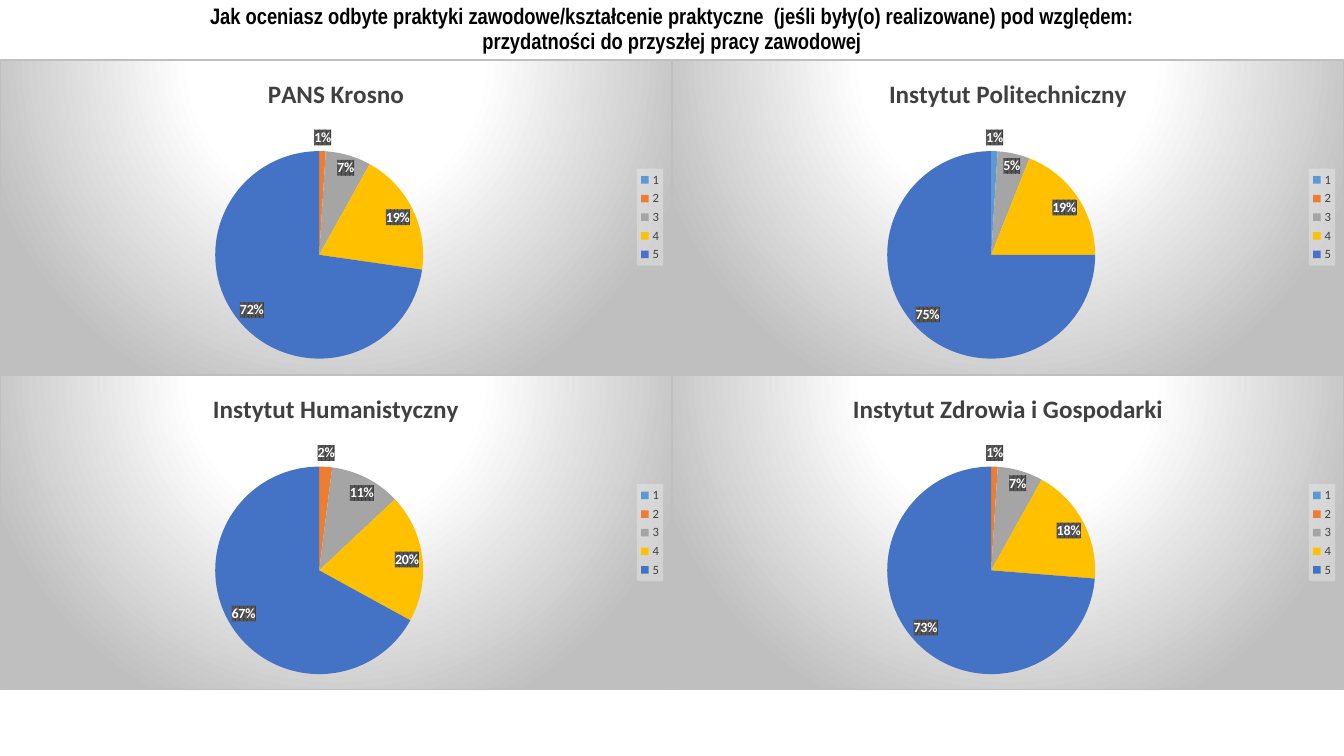
import dataclasses

import lxml.etree
import pptx
import pptx.chart.data
import pptx.dml.color
import pptx.enum.chart
import pptx.enum.text
import pptx.oxml
import pptx.oxml.ns
import pptx.util

Inches = pptx.util.Inches
NAMESPACES = pptx.oxml.ns.nsdecls("c", "a")


@dataclasses.dataclass(frozen=True)
class Theme:
    heading_font: str = "Arial Narrow"
    chart_font: str = "Calibri"
    black: str = "000000"
    white: str = "FFFFFF"
    dark_grey: str = "404040"
    mid_grey: str = "595959"
    edge_grey: str = "BFBFBF"
    legend_grey: str = "F2F2F2"
    grades: tuple[str, ...] = ("5B9BD5", "ED7D31", "A5A5A5", "FFC000", "4472C4")
    heading_size: float = 16
    chart_title_size: float = 18
    label_size: float = 10
    legend_size: float = 9


@dataclasses.dataclass(frozen=True)
class Survey:
    unit: str
    shares: tuple[int, ...]
    unlabelled: tuple[int, ...] = ()


THEME = Theme()
GRADES = ("1", "2", "3", "4", "5")
SURVEYS = (
    Survey("PANS Krosno", (0, 1, 7, 19, 72)),
    Survey("Instytut Politechniczny", (1, 0, 5, 19, 75), unlabelled=(1,)),
    Survey("Instytut Humanistyczny", (0, 2, 11, 20, 67), unlabelled=(0,)),
    Survey("Instytut Zdrowia i Gospodarki", (0, 1, 7, 18, 73)),
)
HEADING = (
    "Jak oceniasz odbyte praktyki zawodowe/kształcenie praktyczne  "
    "(jeśli były(o) realizowane) pod względem:\v"
    "przydatności do przyszłej pracy zawodowej"
)
SLIDE_WIDTH, SLIDE_HEIGHT = 13.33, 7.5
HEADING_HEIGHT = 0.59
COLUMNS = 2
CHART_WIDTH, CHART_HEIGHT = SLIDE_WIDTH / COLUMNS, 3.13


def style_font(font, *, name: str, size: float, color: str, bold: bool = False) -> None:
    font.name = name
    font.size = pptx.util.Pt(size)
    font.bold = bold
    font.color.rgb = pptx.dml.color.RGBColor.from_string(color)


def write_text(frame, text: str, *, line_spacing: float = 1.0, **font_format) -> None:
    paragraph = frame.paragraphs[0]
    paragraph.text = text
    paragraph.alignment = pptx.enum.text.PP_ALIGN.CENTER
    paragraph.line_spacing = line_spacing
    for run in paragraph.runs:
        style_font(run.font, **font_format)


def chart_xml(tag: str, content: str) -> lxml.etree._Element:
    return pptx.oxml.parse_xml(f"<c:{tag} {NAMESPACES}>{content}</c:{tag}>")


def solid(color: str) -> str:
    return f'<a:srgbClr val="{color}"/>'


def add_heading(slide) -> None:
    heading = slide.shapes.add_textbox(0, 0, Inches(SLIDE_WIDTH), Inches(HEADING_HEIGHT))
    frame = heading.text_frame
    frame.word_wrap = True
    frame.vertical_anchor = pptx.enum.text.MSO_ANCHOR.MIDDLE
    write_text(frame, HEADING, line_spacing=0.9, name=THEME.heading_font,
               size=THEME.heading_size, color=THEME.black, bold=True)


def add_background(chart) -> None:
    stops = "".join(
        f'<a:gs pos="{percent * 1000}">{solid(color)}</a:gs>'
        for percent, color in ((0, THEME.white), (39, THEME.white), (100, THEME.edge_grey))
    )
    background = chart_xml("spPr", (
        f'<a:gradFill><a:gsLst>{stops}</a:gsLst><a:path path="circle">'
        '<a:fillToRect l="50000" t="-80000" r="50000" b="180000"/></a:path></a:gradFill>'
        f'<a:ln w="9525"><a:solidFill>{solid(THEME.edge_grey)}</a:solidFill></a:ln>'
    ))
    chart._chartSpace.find(pptx.oxml.ns.qn("c:chart")).addnext(background)


def place_pie(chart) -> None:
    area = chart._chartSpace.chart.plotArea
    for layout in area.findall(pptx.oxml.ns.qn("c:layout")):
        area.remove(layout)
    bounds = "".join(
        f'<c:{name} val="{value}"/>'
        for name, value in (("layoutTarget", "inner"), ("xMode", "edge"), ("yMode", "edge"),
                            ("x", 0.32), ("y", 0.29), ("w", 0.31), ("h", 0.66))
    )
    area.insert(0, chart_xml("layout", f"<c:manualLayout>{bounds}</c:manualLayout>"))


def add_labels(plot, unlabelled: tuple[int, ...]) -> None:
    series = plot.series[0]
    labels = series.data_labels
    labels.show_value = True
    labels.number_format = '0"%"'
    labels.number_format_is_linked = False
    labels.position = pptx.enum.chart.XL_LABEL_POSITION.BEST_FIT
    style_font(labels.font, name=THEME.chart_font, size=THEME.label_size,
               color=THEME.white, bold=True)
    plate = chart_xml("spPr", (
        f'<a:pattFill prst="pct75"><a:fgClr>{solid(THEME.dark_grey)}</a:fgClr>'
        f"<a:bgClr>{solid(THEME.mid_grey)}</a:bgClr></a:pattFill><a:ln><a:noFill/></a:ln>"
    ))
    labels._element.find(pptx.oxml.ns.qn("c:txPr")).addprevious(plate)
    for index in unlabelled:
        labels._element.insert(0, chart_xml("dLbl", f'<c:idx val="{index}"/><c:delete val="1"/>'))


def add_legend(chart) -> None:
    chart.has_legend = True
    legend = chart.legend
    legend.position = pptx.enum.chart.XL_LEGEND_POSITION.RIGHT
    legend.include_in_layout = False
    style_font(legend.font, name=THEME.chart_font, size=THEME.legend_size, color=THEME.dark_grey)
    plate = chart_xml("spPr", (
        f'<a:solidFill><a:srgbClr val="{THEME.legend_grey}"><a:alpha val="39000"/></a:srgbClr>'
        "</a:solidFill><a:ln><a:noFill/></a:ln>"
    ))
    legend._element.find(pptx.oxml.ns.qn("c:txPr")).addprevious(plate)


def add_survey(slide, survey: Survey, left: float, top: float) -> None:
    answers = pptx.chart.data.CategoryChartData()
    answers.categories = GRADES
    answers.add_series("Series 1", survey.shares)
    chart = slide.shapes.add_chart(
        pptx.enum.chart.XL_CHART_TYPE.PIE, Inches(left), Inches(top),
        Inches(CHART_WIDTH), Inches(CHART_HEIGHT), answers,
    ).chart
    style_font(chart.font, name=THEME.chart_font, size=THEME.label_size, color=THEME.black)
    add_background(chart)
    place_pie(chart)

    # Chart title
    chart.has_title = True
    chart.chart_title.include_in_layout = False
    write_text(chart.chart_title.text_frame, survey.unit, name=THEME.chart_font,
               size=THEME.chart_title_size, color=THEME.dark_grey, bold=True)

    # Slices, one colour per grade
    plot = chart.plots[0]
    plot.vary_by_categories = True
    for index, color in enumerate(THEME.grades):
        fill = plot.series[0].points[index].format.fill
        fill.solid()
        fill.fore_color.rgb = pptx.dml.color.RGBColor.from_string(color)
    add_labels(plot, survey.unlabelled)
    add_legend(chart)


def main() -> None:
    deck = pptx.Presentation()
    deck.slide_width, deck.slide_height = Inches(SLIDE_WIDTH), Inches(SLIDE_HEIGHT)
    slide = deck.slides.add_slide(deck.slide_layouts[6])
    add_heading(slide)

    # Grid of survey charts
    for position, survey in enumerate(SURVEYS):
        row, column = divmod(position, COLUMNS)
        add_survey(slide, survey, column * CHART_WIDTH, HEADING_HEIGHT + row * CHART_HEIGHT)
    deck.save("out.pptx")


if __name__ == "__main__":
    main()
